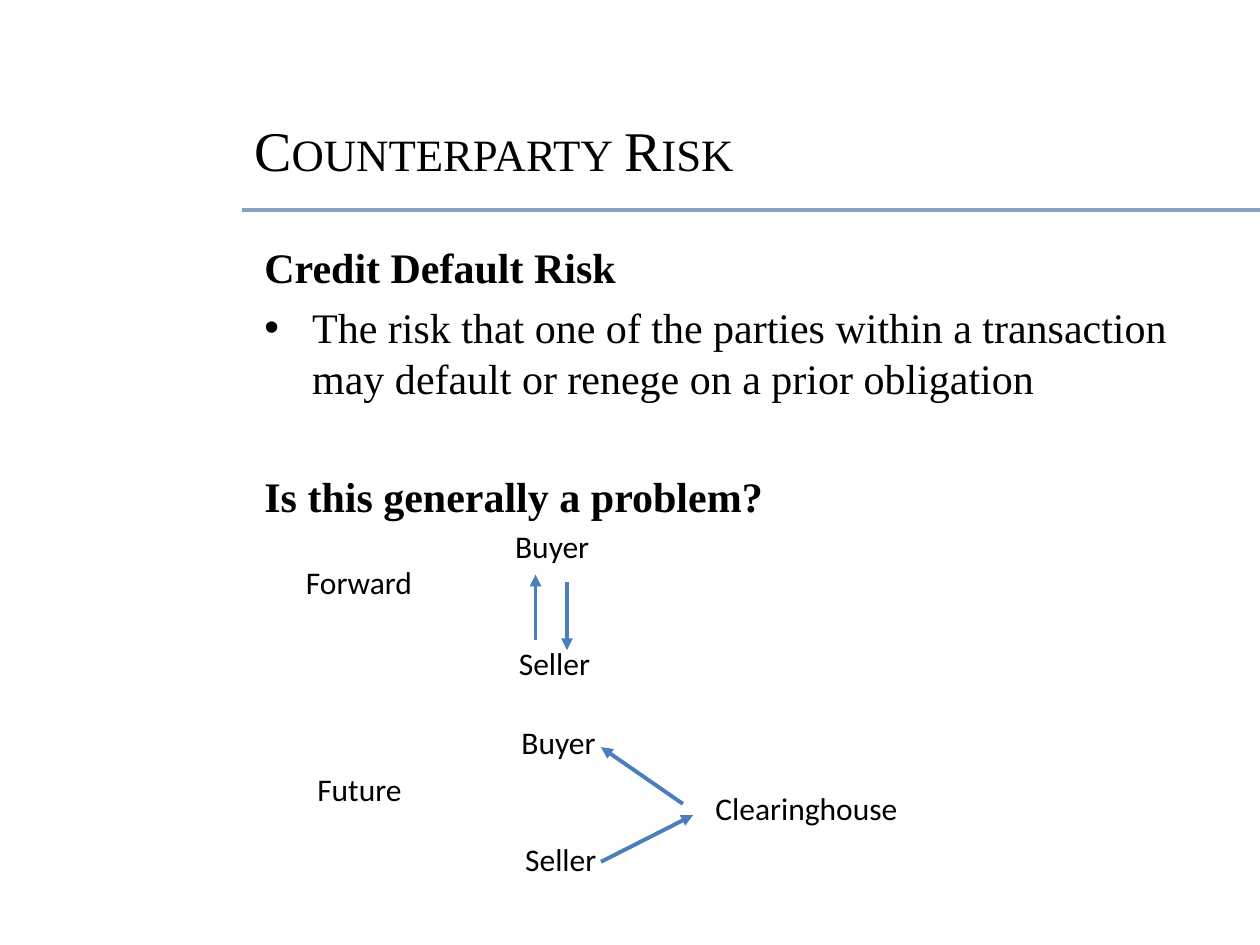
from dataclasses import dataclass

from lxml import etree
from pptx import Presentation
from pptx import util as u
from pptx.dml.color import RGBColor
from pptx.enum import shapes, text
from pptx.oxml.ns import qn

PX = 9144


@dataclass(frozen=True)
class Theme:
    ink: str = "000000"
    rule: str = "89A2C4"
    arrow: str = "4B7EBC"
    serif: str = "Times New Roman"
    sans: str = "Calibri"
    title_size: int = 32
    body_size: int = 24
    label_size: int = 18
    stroke: float = 2.25


def px(*lengths):
    return [u.Emu(length * PX) for length in lengths]


def write(para, content, *, font, size, color, bold=False, small_caps=False,
          bullet=None, indent=0, before=0):
    properties = para._p.get_or_add_pPr()
    if bullet:
        properties.set("marL", str(indent * PX))
        properties.set("indent", str(-indent * PX))
        etree.SubElement(properties, qn("a:buFont"), typeface="Arial")
        etree.SubElement(properties, qn("a:buChar"), char=bullet)
    para.space_before = u.Pt(before)
    span = para.add_run()
    span.text = content
    span.font.name = font
    span.font.size = u.Pt(size)
    span.font.bold = bold
    span.font.color.rgb = RGBColor.from_string(color)
    if small_caps:
        span._r.get_or_add_rPr().set("cap", "small")


class SlideBuilder:
    def __init__(self, page, theme):
        self.page = page
        self.theme = theme

    def frame(self, left, top, width, height):
        box = self.page.shapes.add_textbox(*px(left, top, width, height))
        box.text_frame.word_wrap = True
        return box.text_frame

    def title(self, content, *place):
        frame = self.frame(*place)
        frame.vertical_anchor = text.MSO_ANCHOR.MIDDLE
        write(frame.paragraphs[0], content, font=self.theme.serif,
              size=self.theme.title_size, color=self.theme.ink, small_caps=True)

    def body(self, items, *place):
        frame = self.frame(*place)
        frame.margin_top = px(9)[0]
        for index, (content, style) in enumerate(items):
            para = frame.add_paragraph() if index else frame.paragraphs[0]
            write(para, content, font=self.theme.serif,
                  size=self.theme.body_size, color=self.theme.ink, **style)

    def label(self, content, left, top, width=117, height=40):
        frame = self.frame(left, top, width, height)
        frame.auto_size = text.MSO_AUTO_SIZE.SHAPE_TO_FIT_TEXT
        write(frame.paragraphs[0], content, font=self.theme.sans,
              size=self.theme.label_size, color=self.theme.ink)

    def line(self, start, end, color):
        connector = self.page.shapes.add_connector(
            shapes.MSO_CONNECTOR.STRAIGHT, *px(*start, *end))
        connector.line.color.rgb = RGBColor.from_string(color)
        connector.line.width = u.Pt(self.theme.stroke)
        etree.SubElement(connector._element.spPr, qn("a:effectLst"))
        return connector

    def arrow(self, start, end):
        connector = self.line(start, end, self.theme.arrow)
        etree.SubElement(connector.line._get_or_add_ln(), qn("a:tailEnd"),
                         type="triangle")


def main():
    deck = Presentation()
    deck.slide_width, deck.slide_height = px(1000, 750)
    theme = Theme()
    builder = SlideBuilder(deck.slides.add_slide(deck.slide_layouts[6]), theme)

    builder.line((192, 167), (1000, 167), theme.rule)
    builder.title("Counterparty Risk", 192, 75, 717, 87)
    builder.body([
        ("Credit Default Risk", dict(bold=True)),
        ("The risk that one of the parties within a transaction may default "
         "or renege on a prior obligation",
         dict(bullet="•", indent=38, before=5.5)),
        ("Is this generally a problem?", dict(bold=True, before=38.5)),
    ], 200, 183, 767, 517)

    builder.label("Forward", 233, 442)
    builder.label("Future", 242, 606)
    for left, top in ((399, 413), (404, 569)):
        builder.label("Buyer", left, top)
        builder.label("Seller", left + 3, top + 93)
    builder.label("Clearinghouse", 558, 621, 167, 71)

    for start, end in (
        ((425, 508), (425, 456)),
        ((450, 462), (450, 516)),
        ((477, 684), (550, 647)),
        ((542, 638), (477, 593)),
    ):
        builder.arrow(start, end)

    deck.save("out.pptx")


if __name__ == "__main__":
    main()
